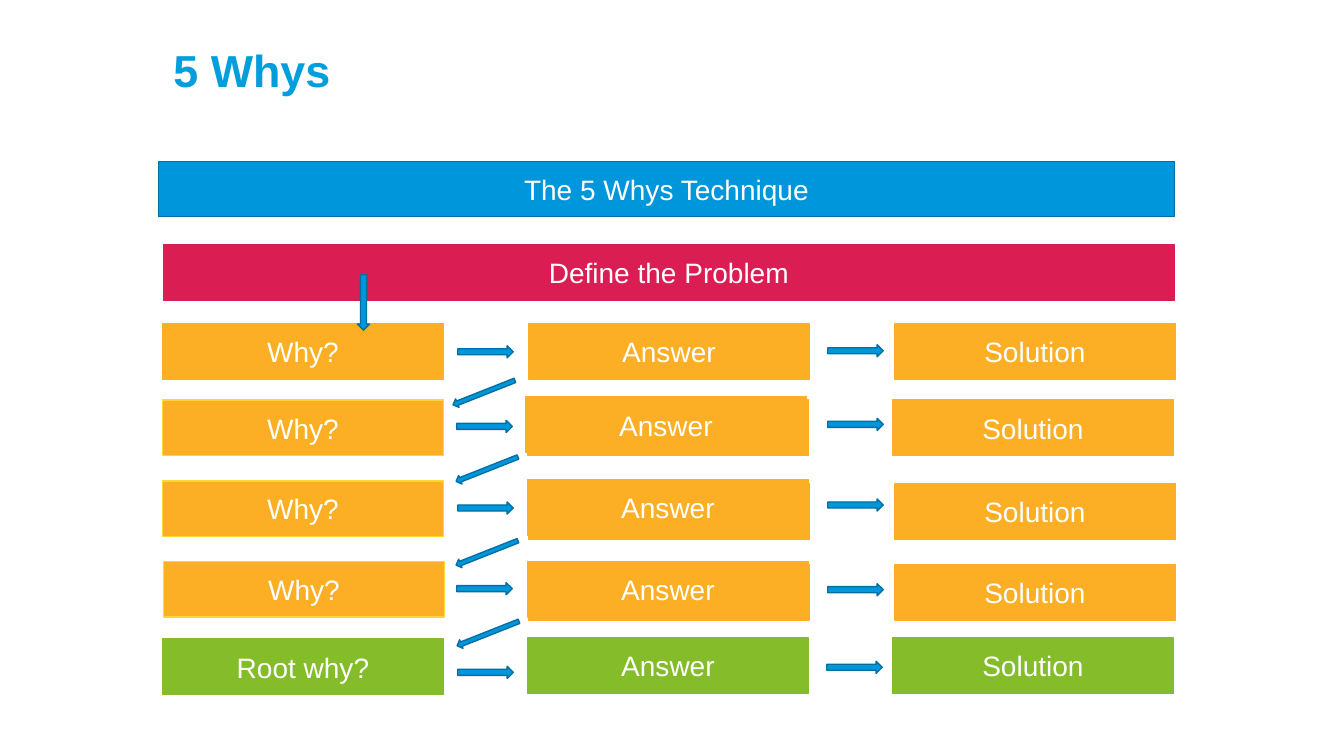
import pptx
import pptx.util
import pptx.dml.color
import pptx.enum.shapes
import pptx.enum.text

PX = 9144  # EMU per px, 100 px to the inch
FONT = "Arial"
COLORS = {
    "title": "009EDB", "blue": "0096DB", "navy": "006FA2", "red": "DA1D53",
    "orange": "FCAF25", "yellow": "FFD632", "green": "84BD29", "white": "FFFFFF",
}

TITLE = ("5 Whys", (162, 50, 809, 44))
BANNERS = [  # text, box, fill, line
    ("The 5 Whys Technique", (157, 160, 1008, 55), "blue", "navy"),
    ("Define the Problem", (162, 243, 1003, 55), "red", "red"),
]
BOX_WIDTH, BOX_HEIGHT = 279, 55
ROWS = [  # fill, line of the first box, then (text, left, top) for each column
    ("orange", "orange", [("Why?", 161, 321), ("Answer", 524, 321), ("Solution", 887, 321)]),
    ("orange", "yellow", [("Why?", 161, 397), ("Answer", 521, 394), ("Solution", 885, 397)]),
    ("orange", "yellow", [("Why?", 161, 477), ("Answer", 523, 476), ("Solution", 887, 480)]),
    ("orange", "yellow", [("Why?", 162, 557), ("Answer", 523, 557), ("Solution", 887, 560)]),
    ("green", "green", [("Root why?", 161, 634), ("Answer", 523, 633), ("Solution", 885, 633)]),
]
ANSWER_BACKINGS = [(523, 397), (524, 480), (524, 560)]
ARROW_GROUPS = [  # width, height, rotation, (left, top) of each arrow
    (55, 12, 90, [(333, 294)]),
    (55, 12, 0, [(454, 343), (453, 417), (454, 498), (453, 578), (454, 661)]),
    (55, 12, 0, [(821, 342), (821, 415), (821, 495), (821, 579), (820, 656)]),
    (66, 9, 158.4, [(447, 385), (450, 461), (450, 544), (451, 624)]),
]

SHAPES = pptx.enum.shapes.MSO_SHAPE
ALIGN = pptx.enum.text.PP_ALIGN
MIDDLE = pptx.enum.text.MSO_ANCHOR.MIDDLE


def color(name):
    return pptx.dml.color.RGBColor.from_string(COLORS[name])


def emu(box):
    return [pptx.util.Emu(length * PX) for length in box]


def write(shape, text, size, color_name, align, bold=False):
    frame = shape.text_frame
    frame.text = text
    frame.word_wrap = True
    frame.vertical_anchor = MIDDLE
    paragraph = frame.paragraphs[0]
    paragraph.alignment = align
    font = paragraph.runs[0].font
    font.name, font.size, font.bold = FONT, pptx.util.Pt(size), bold
    font.color.rgb = color(color_name)
    return paragraph


def add_shape(slide, kind, box, fill, line):
    shape = slide.shapes.add_shape(kind, *emu(box))
    shape.shadow.inherit = False
    shape.fill.solid()
    shape.fill.fore_color.rgb = color(fill)
    shape.line.color.rgb = color(line)
    shape.line.width = pptx.util.Pt(1)
    return shape


def add_box(slide, text, box, fill, line):
    shape = add_shape(slide, SHAPES.RECTANGLE, box, fill, line)
    write(shape, text, 20, "white", ALIGN.CENTER)


def add_title(slide):
    text, box = TITLE
    title = slide.shapes.title
    title.left, title.top, title.width, title.height = emu(box)
    paragraph = write(title, text, 32, "title", ALIGN.LEFT, bold=True)
    paragraph.line_spacing = 0.9
    title.text_frame.auto_size = pptx.enum.text.MSO_AUTO_SIZE.NONE


def main():
    presentation = pptx.Presentation()
    presentation.slide_width, presentation.slide_height = emu((1333, 750))
    slide = presentation.slides.add_slide(presentation.slide_layouts[5])
    add_title(slide)

    for banner in BANNERS:
        add_box(slide, *banner)
    for left, top in ANSWER_BACKINGS:
        box = (left, top, BOX_WIDTH, BOX_HEIGHT)
        add_shape(slide, SHAPES.RECTANGLE, box, "orange", "orange")
    for fill, first_line, cells in ROWS:
        for column, (text, left, top) in enumerate(cells):
            line = fill if column else first_line
            add_box(slide, text, (left, top, BOX_WIDTH, BOX_HEIGHT), fill, line)
    for width, height, rotation, corners in ARROW_GROUPS:
        for left, top in corners:
            box = (left, top, width, height)
            arrow = add_shape(slide, SHAPES.RIGHT_ARROW, box, "blue", "navy")
            arrow.rotation = rotation

    presentation.save("out.pptx")


if __name__ == "__main__":
    main()
